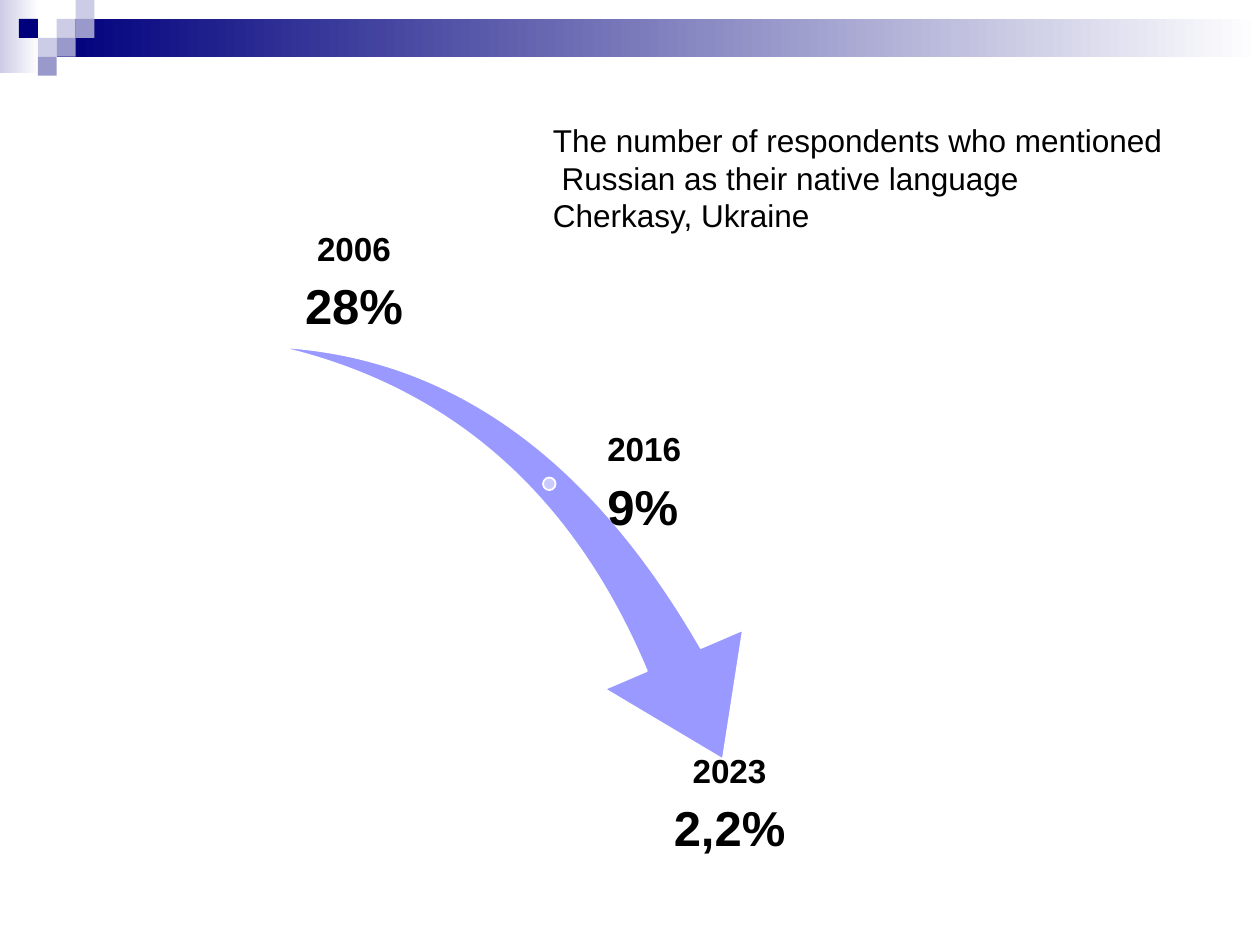
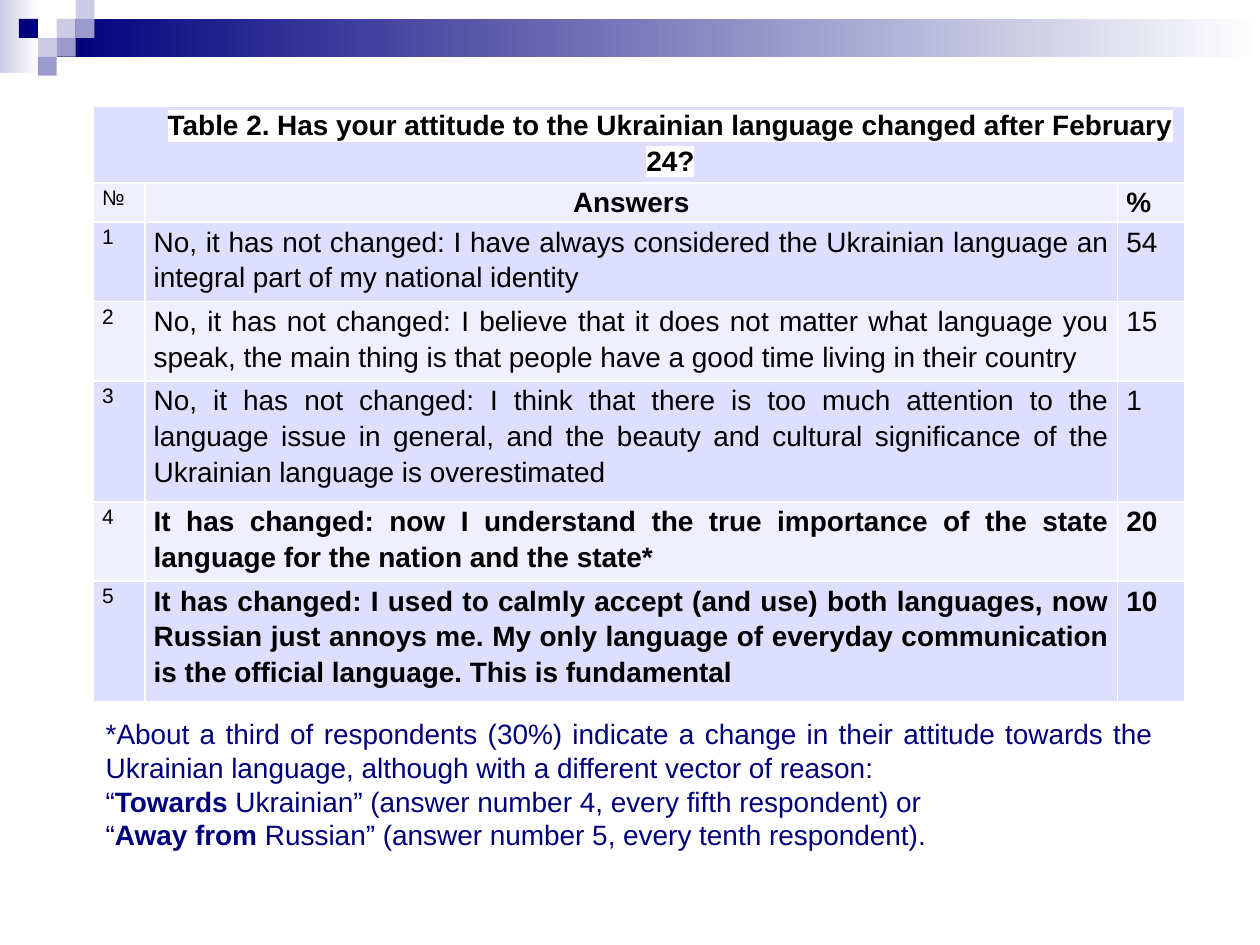
"""Build two slides on native language and attitudes to Ukrainian in Cherkasy."""
from lxml import etree
from pptx import Presentation
from pptx.dml.color import RGBColor
from pptx.enum.shapes import MSO_SHAPE
from pptx.enum.text import MSO_ANCHOR, MSO_AUTO_SIZE, PP_ALIGN
from pptx.oxml.ns import qn
from pptx.util import Inches, Pt

RECTANGLE, OVAL, SWOOSH = MSO_SHAPE.RECTANGLE, MSO_SHAPE.OVAL, MSO_SHAPE.SWOOSH_ARROW
LEFT, CENTER, JUSTIFY = PP_ALIGN.LEFT, PP_ALIGN.CENTER, PP_ALIGN.JUSTIFY
TOP, MIDDLE, BOTTOM = MSO_ANCHOR.TOP, MSO_ANCHOR.MIDDLE, MSO_ANCHOR.BOTTOM
FIT_SHAPE = MSO_AUTO_SIZE.SHAPE_TO_FIT_TEXT

BLACK = RGBColor(0x00, 0x00, 0x00)
WHITE = RGBColor(0xFF, 0xFF, 0xFF)
NAVY = RGBColor(0x00, 0x00, 0x7D)
LILAC = RGBColor(0xCC, 0xCC, 0xE6)
MAUVE = RGBColor(0x99, 0x99, 0xCC)
ARROW_BLUE = RGBColor(0x99, 0x99, 0xFF)
MARKER_BLUE = RGBColor(0xCA, 0xCA, 0xFF)
BAND_DARK = RGBColor(0xDE, 0xDE, 0xFF)
BAND_LIGHT = RGBColor(0xEF, 0xEF, 0xFF)
FONT = "Arial"
SQUARE = 0.15


def add_paragraph(frame, text, size=16, color=BLACK, bold=False, align=LEFT,
                  line_spacing=1.0, space_after=0):
    """Add one paragraph to a frame; parts between double asterisks are bold."""
    paragraph = frame.add_paragraph() if frame.text else frame.paragraphs[0]
    paragraph.alignment = align
    paragraph.line_spacing = line_spacing
    paragraph.space_after = Pt(space_after)
    for index, part in enumerate(text.split("**")):
        if part:
            run = paragraph.add_run()
            run.text = part
            run.font.name = FONT
            run.font.size = Pt(size)
            run.font.bold = bold or index % 2 == 1
            run.font.color.rgb = color
    return paragraph


def add_figure(slide, kind, box, fill, line=None):
    """Add a preset shape with a plain fill or a fade given as two colours."""
    figure = slide.shapes.add_shape(kind, *map(Inches, box))
    figure.shadow.inherit = False
    if isinstance(fill, list):
        figure.fill.gradient()
        figure.fill.gradient_angle = 0
        for stop, color in zip(figure.fill.gradient_stops, fill):
            stop.color.rgb = color
    else:
        figure.fill.solid()
        figure.fill.fore_color.rgb = fill
    if line is None:
        figure.line.fill.background()
    else:
        figure.line.color.rgb = line
        figure.line.width = Pt(1)
    return figure


prs = Presentation()
prs.slide_width, prs.slide_height = Inches(10), Inches(7.5)
blank = prs.slide_layouts[6]
decline_slide = prs.slides.add_slide(blank)
attitude_slide = prs.slides.add_slide(blank)

header = [
    add_figure(decline_slide, RECTANGLE, (0, 0, 0.31, 0.58), [LILAC, WHITE]),
    add_figure(decline_slide, RECTANGLE, (0.45, 0.15, 9.55, 0.3), [NAVY, WHITE]),
]
mosaic = [(3, 1, LILAC), (4, 0, LILAC), (4, 1, MAUVE), (2, 2, LILAC),
          (1, 1, NAVY), (3, 2, MAUVE), (2, 3, MAUVE)]
for column, row, color in mosaic:
    header.append(add_figure(decline_slide, RECTANGLE,
                             (column * SQUARE, row * SQUARE, SQUARE, SQUARE), color))
for part in header:
    prs.slide_master.shapes.element.append(part.element)

decline_arrow = add_figure(decline_slide, SWOOSH, (2.11, 2.88, 4.15, 2.89), ARROW_BLUE, WHITE)
decline_arrow.rotation = 73.3
decline_arrow.adjustments[0] = 0.16
decline_arrow.adjustments[1] = 0.31
add_figure(decline_slide, OVAL, (4.31, 3.79, 0.1, 0.1), MARKER_BLUE, WHITE)

milestones = [
    ("2006", "28%", (1.83, 1.92, 1.96, 0.77), BOTTOM, CENTER),
    ("2016", "9%", (4.79, 3.46, 2.32, 0.77), MIDDLE, LEFT),
    ("2023", "2,2%", (4.47, 5.96, 2.64, 0.77), TOP, CENTER),
]
for year, share, box, anchor, align in milestones:
    frame = decline_slide.shapes.add_textbox(*map(Inches, box)).text_frame
    frame.word_wrap = True
    frame.vertical_anchor = anchor
    frame.margin_left = frame.margin_right = Inches(0.03)
    frame.margin_top = frame.margin_bottom = Inches(0.03)
    add_paragraph(frame, year, size=19, bold=True, align=align, line_spacing=0.9, space_after=8)
    add_paragraph(frame, share, size=28, bold=True, align=align, line_spacing=0.9)

caption = decline_slide.shapes.add_textbox(
    Inches(4.29), Inches(0.91), Inches(5.08), Inches(1.01)).text_frame
caption.word_wrap = False
caption.auto_size = FIT_SHAPE
for line in ("The number of respondents who mentioned",
             " Russian as their native language",
             "Cherkasy, Ukraine"):
    add_paragraph(caption, line, size=18)

table_title = "Table 2. Has your attitude to the Ukrainian language changed after February 24?"
answers = [
    ("No, it has not changed: I have always considered the Ukrainian language an integral "
     "part of my national identity", 54, False),
    ("No, it has not changed: I believe that it does not matter what language you speak, "
     "the main thing is that people have a good time living in their country", 15, False),
    ("No, it has not changed: I think that there is too much attention to the language issue "
     "in general, and the beauty and cultural significance of the Ukrainian language is "
     "overestimated", 1, False),
    ("It has changed: now I understand the true importance of the state language for the "
     "nation and the state*", 20, True),
    ("It has changed: I used to calmly accept (and use) both languages, now Russian just "
     "annoys me. My only language of everyday communication is the official language. "
     "This is fundamental", 10, True),
]
column_widths = [0.41, 7.72, 0.53]
row_heights = [0.35, 0.31, 0.63, 0.63, 0.96, 0.63, 0.96]
survey = attitude_slide.shapes.add_table(
    len(row_heights), len(column_widths), Inches(0.74), Inches(0.84),
    Inches(sum(column_widths)), Inches(sum(row_heights))).table
survey.first_row = survey.horz_banding = False
for column, width in zip(survey.columns, column_widths):
    column.width = Inches(width)
for row, height in zip(survey.rows, row_heights):
    row.height = Inches(height)

for row_index, row in enumerate(survey.rows):
    for cell in row.cells:
        cell.margin_left = cell.margin_right = Inches(0.07)
        cell.margin_top = cell.margin_bottom = 0
        properties = cell._tc.get_or_add_tcPr()
        for side in ("a:lnL", "a:lnR", "a:lnT", "a:lnB"):
            border = etree.SubElement(properties, qn(side), w=str(Pt(1)))
            border_fill = etree.SubElement(border, qn("a:solidFill"))
            etree.SubElement(border_fill, qn("a:srgbClr"), val=str(WHITE))
        cell.fill.solid()
        cell.fill.fore_color.rgb = BAND_LIGHT if row_index % 2 else BAND_DARK

title_cell = survey.cell(0, 0)
title_cell.merge(survey.cell(0, 2))
title_line = add_paragraph(title_cell.text_frame, table_title, bold=True, align=CENTER,
                           line_spacing=1.15, space_after=10)
title_line._p.get_or_add_pPr().set("marL", str(Inches(0.5)))
highlight = etree.Element(qn("a:highlight"))
etree.SubElement(highlight, qn("a:srgbClr"), val=str(WHITE))
title_line.runs[0].font._element.find(qn("a:solidFill")).addnext(highlight)

survey_rows = [("№", "Answers", "%", True, CENTER)]
for number, (answer, percent, bold) in enumerate(answers, start=1):
    survey_rows.append((str(number), answer, str(percent), bold, JUSTIFY))
for row_index, (number, answer, percent, bold, align) in enumerate(survey_rows, start=1):
    number_cell, answer_cell, percent_cell = survey.rows[row_index].cells
    add_paragraph(number_cell.text_frame, number, size=12, align=JUSTIFY, line_spacing=1.15)
    add_paragraph(answer_cell.text_frame, answer, bold=bold, align=align, line_spacing=1.15)
    add_paragraph(percent_cell.text_frame, percent, bold=bold, align=JUSTIFY, line_spacing=1.15)

footnote = attitude_slide.shapes.add_textbox(
    Inches(0.74), Inches(5.64), Inches(8.51), Inches(1.18)).text_frame
footnote.word_wrap = True
footnote.auto_size = FIT_SHAPE
for line in ("*About a third of respondents (30%) indicate a change in their attitude towards "
             "the Ukrainian language, although with a different vector of reason:",
             "“**Towards** Ukrainian” (answer number 4, every fifth respondent) or",
             "“**Away from** Russian” (answer number 5, every tenth respondent)."):
    add_paragraph(footnote, line, color=NAVY, align=JUSTIFY)

prs.save("out.pptx")
